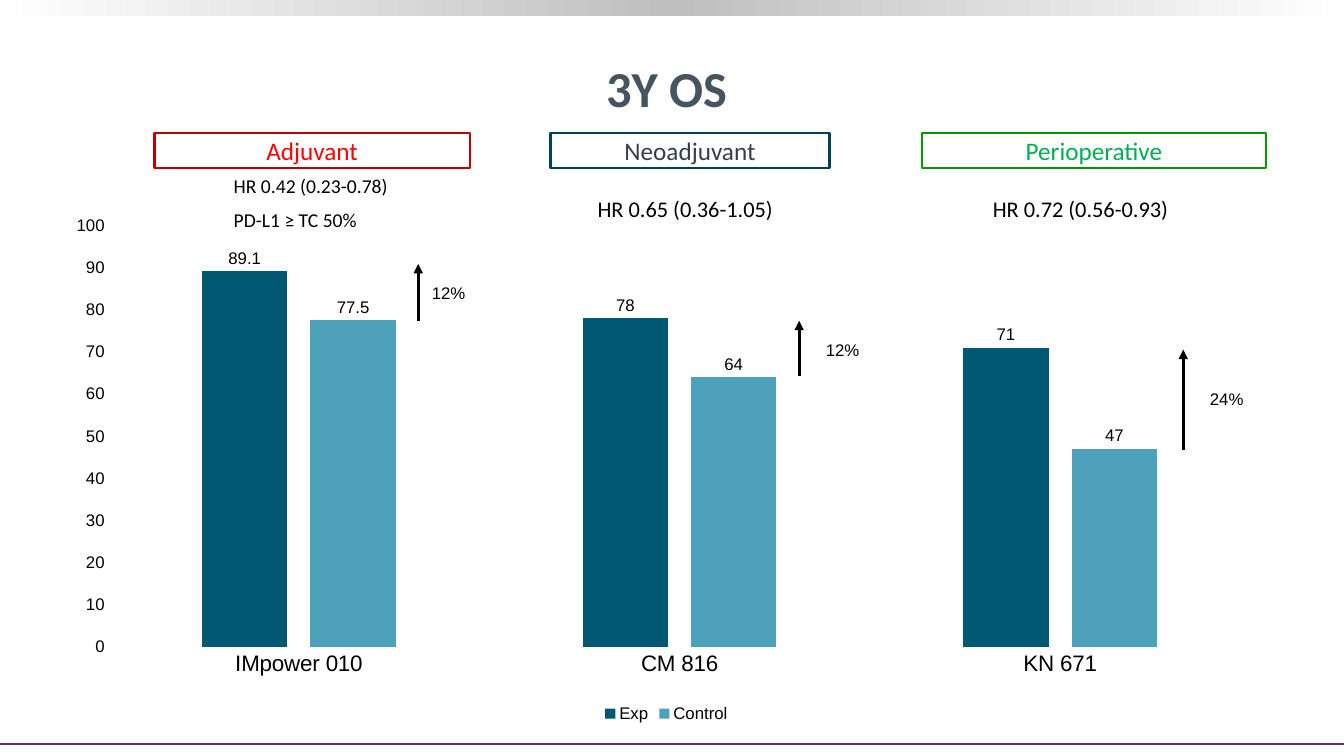
from copy import deepcopy
from lxml import etree
from pptx import Presentation
from pptx.chart.data import CategoryChartData
from pptx.dml.color import RGBColor
from pptx.enum.chart import XL_CHART_TYPE, XL_LABEL_POSITION, XL_LEGEND_POSITION, XL_TICK_MARK
from pptx.enum.shapes import MSO_CONNECTOR, MSO_SHAPE
from pptx.enum.text import MSO_ANCHOR, PP_ALIGN
from pptx.oxml import parse_xml
from pptx.oxml.ns import nsdecls, qn
from pptx.util import Cm, Pt

BLACK = RGBColor(0, 0, 0)
WHITE = RGBColor(255, 255, 255)
GREY = RGBColor(0xBF, 0xBF, 0xBF)
SLATE = RGBColor(0x45, 0x55, 0x60)
PURPLE = RGBColor(0x68, 0x2E, 0x74)
DARK_TEAL = RGBColor(0x01, 0x58, 0x73)
LIGHT_TEAL = RGBColor(0x4D, 0xA1, 0xBB)
DARK_RED = RGBColor(0xC0, 0, 0)
RED = RGBColor(255, 0, 0)
NAVY = RGBColor(0x01, 0x42, 0x56)
CHARCOAL = RGBColor(0x34, 0x40, 0x48)
GREEN = RGBColor(0, 0x99, 0)
BRIGHT_GREEN = RGBColor(0, 0xB0, 0x50)


def write(tf, lines, size, name="Calibri", color=BLACK, align=PP_ALIGN.LEFT, bold=False):
    tf.word_wrap = True
    for i, line in enumerate(lines):
        p = tf.paragraphs[0] if i == 0 else tf.add_paragraph()
        p.alignment = align
        p.space_before = Pt(size / 2 if i else 0)
        r = p.add_run()
        r.text = line
        for key, value in dict(size=Pt(size), name=name, bold=bold).items():
            setattr(r.font, key, value)
        r.font.color.rgb = color


def add_line(x1, y1, x2, y2, color, width):
    line = s.shapes.add_connector(MSO_CONNECTOR.STRAIGHT, Cm(x1), Cm(y1), Cm(x2), Cm(y2))
    line.line.color.rgb = color
    line.line.width = Pt(width)
    etree.SubElement(line._element.spPr, qn("a:effectLst"))
    return line


prs = Presentation()
prs.slide_width, prs.slide_height = Cm(33.87), Cm(19.05)
s = prs.slides.add_slide(prs.slide_layouts[5])

title = s.shapes.title
title.left, title.top, title.width, title.height = Cm(1.7), Cm(0.66), Cm(30.2), Cm(3.07)
title.text_frame.vertical_anchor = MSO_ANCHOR.MIDDLE
write(title.text_frame, ["3Y OS"], 36, color=SLATE, align=PP_ALIGN.CENTER, bold=True)

band = s.shapes.add_shape(MSO_SHAPE.RECTANGLE, 0, 0, prs.slide_width, Cm(0.4))
band.shadow.inherit = False
band.line.fill.background()
band.fill.gradient()
band.fill.gradient_angle = 0
stop_list = band._element.spPr.find(".//" + qn("a:gsLst"))
stop_list.insert(1, deepcopy(stop_list[0]))
for stop, position, color in zip(band.fill.gradient_stops, (0, 0.5, 1), (WHITE, GREY, WHITE)):
    stop.position = position
    stop.color.rgb = color
add_line(0, 18.75, 33.87, 18.75, PURPLE, 1.5)

data = CategoryChartData()
data.categories = ["IMpower 010", "CM 816", "KN 671"]
data.add_series("Exp", (89.1, 78, 71))
data.add_series("Control", (77.5, 64, 47))
chart = s.shapes.add_chart(XL_CHART_TYPE.COLUMN_CLUSTERED, Cm(1.68), Cm(4.8),
                           Cm(30.23), Cm(13.51), data).chart
chart.has_title = False
chart.has_legend = True
chart.legend.position = XL_LEGEND_POSITION.BOTTOM
chart.legend.include_in_layout = False

plot = chart.plots[0]
plot.gap_width, plot.overlap, plot.vary_by_categories = 219, -27, False
fonts = [(chart.font, 10), (chart.legend.font, 12)]
for series, color in zip(plot.series, (DARK_TEAL, LIGHT_TEAL)):
    series.format.fill.solid()
    series.format.fill.fore_color.rgb = color
    labels = series.data_labels
    labels.show_value = True
    labels.position = XL_LABEL_POSITION.OUTSIDE_END
    fonts.append((labels.font, 12))

cat_axis, val_axis = chart.category_axis, chart.value_axis
val_axis.minimum_scale, val_axis.maximum_scale, val_axis.major_unit = 0, 100, 10
for axis, size in ((cat_axis, 16), (val_axis, 12)):
    axis.major_tick_mark = axis.minor_tick_mark = XL_TICK_MARK.NONE
    fonts.append((axis.tick_labels.font, size))
for line in (cat_axis.format.line, val_axis.major_gridlines.format.line):
    line.color.rgb = WHITE
    line.width = Pt(0.75)
val_axis.format.line.fill.background()
for font, size in fonts:
    font.size, font.name = Pt(size), "Arial"
    font.color.rgb = BLACK

plot_area = chart._chartSpace.chart.plotArea
for old in plot_area.findall(qn("c:layout")):
    plot_area.remove(old)
plot_area.insert(0, parse_xml(
    f'<c:layout {nsdecls("c")}><c:manualLayout><c:layoutTarget val="inner"/>'
    '<c:xMode val="edge"/><c:yMode val="edge"/><c:x val="0.035"/><c:y val="0.065"/>'
    '<c:w val="0.952"/><c:h val="0.787"/></c:manualLayout></c:layout>'))

for left, width, text, border, color in (
        (3.89, 7.95, "Adjuvant", DARK_RED, RED),
        (13.87, 7.04, "Neoadjuvant", NAVY, CHARCOAL),
        (23.24, 8.66, "Perioperative", GREEN, BRIGHT_GREEN)):
    sp = s.shapes.add_shape(MSO_SHAPE.RECTANGLE, Cm(left), Cm(3.35), Cm(width), Cm(0.89))
    sp.shadow.inherit = False
    sp.fill.background()
    sp.line.color.rgb = border
    sp.line.width = Pt(1.75)
    tf = sp.text_frame
    tf.margin_top = tf.margin_bottom = 0
    tf.vertical_anchor = MSO_ANCHOR.MIDDLE
    write(tf, [text], 18, color=color, align=PP_ALIGN.CENTER)

for left, top, width, height, size, lines in (
        (5.64, 4.27, 4.88, 1.75, 14, ["HR 0.42 (0.23-0.78)", "PD-L1 ≥ TC 50%"]),
        (14.81, 4.8, 5.16, 0.94, 16, ["HR 0.65 (0.36-1.05)"]),
        (24.77, 4.8, 5.16, 0.94, 16, ["HR 0.72 (0.56-0.93)"])):
    hazard = s.shapes.add_textbox(Cm(left), Cm(top), Cm(width), Cm(height))
    write(hazard.text_frame, lines, size)

for x, bottom, top, left, label_top, text in (
        (10.54, 8.08, 6.65, 10.06, 6.99, "12%"),
        (20.14, 9.47, 8.08, 19.99, 8.43, "12%"),
        (29.82, 11.33, 8.81, 29.67, 9.68, "24%")):
    arrow = add_line(x, bottom, x, top, BLACK, 2.25)
    etree.SubElement(arrow.line._get_or_add_ln(), qn("a:tailEnd"), type="triangle")
    gain = s.shapes.add_textbox(Cm(left), Cm(label_top), Cm(2.49), Cm(0.76))
    write(gain.text_frame, [text], 12, name="Arial", align=PP_ALIGN.CENTER)

prs.save("out.pptx")
